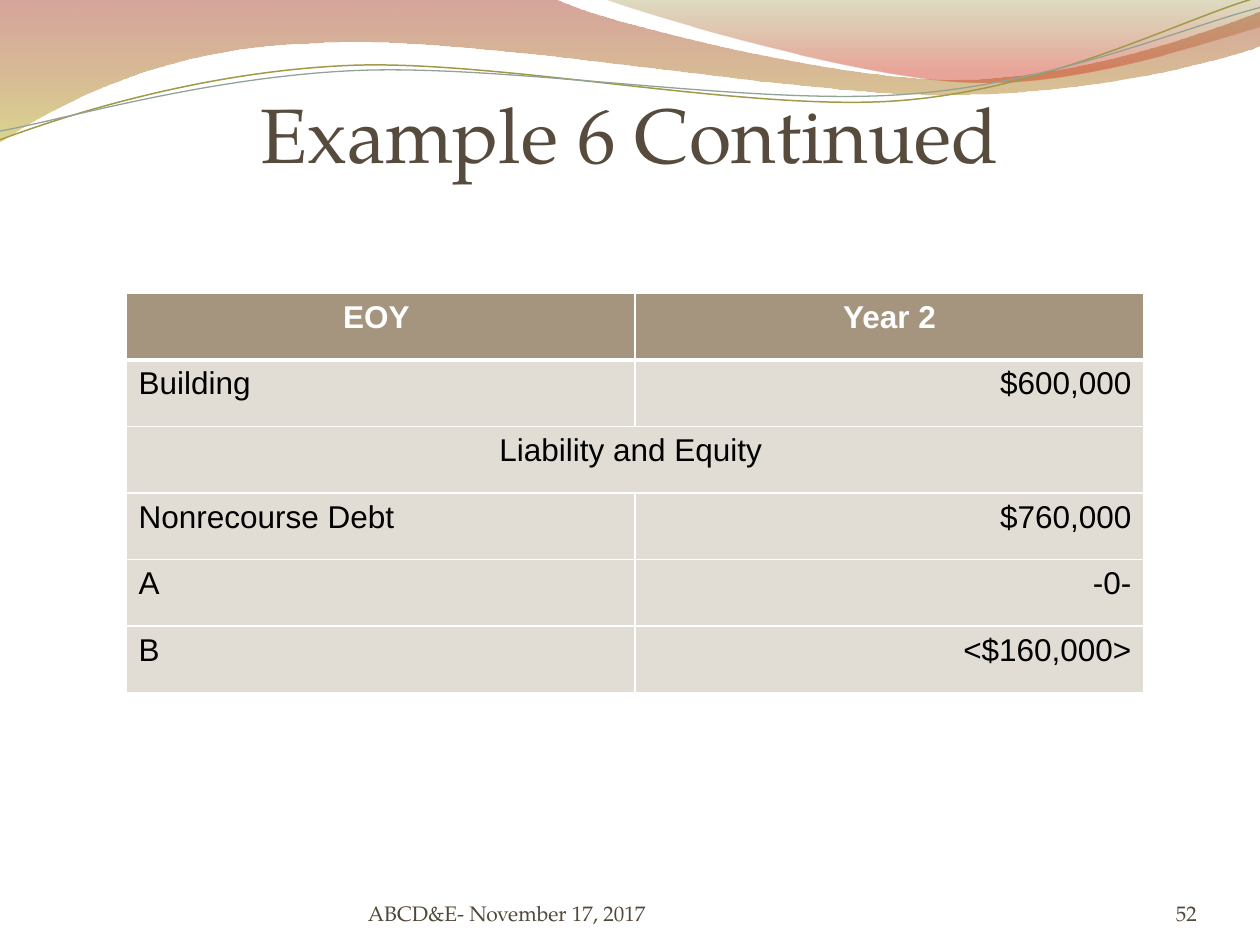
"""Build the 'Example 6 Continued' balance table slide with a wave header."""
from lxml.etree import SubElement
from pptx import Presentation
from pptx.dml.color import RGBColor
from pptx.enum.text import MSO_ANCHOR, MSO_AUTO_SIZE, PP_ALIGN
from pptx.oxml import parse_xml
from pptx.oxml.ns import nsdecls, qn
from pptx.util import Inches, Pt

SERIF, SANS = "TeX Gyre Pagella", "Arial"
TITLE_BROWN = RGBColor(0x56, 0x4B, 0x3C)
FOOTER_BROWN = RGBColor(0x52, 0x48, 0x39)
HEADER_FILL = RGBColor(0xA5, 0x95, 0x7E)
BODY_FILL = RGBColor(0xE1, 0xDC, 0xD4)
WHITE = RGBColor(0xFF, 0xFF, 0xFF)
BLACK = RGBColor(0, 0, 0)
RUST = RGBColor(0xA4, 0x37, 0x24)
MUSTARD = RGBColor(0xBD, 0xB3, 0x33)
OLIVE = RGBColor(0x91, 0x8A, 0x33)
RED = RGBColor(0xD0, 0x38, 0x1E)
OLIVE_LINE = RGBColor(0xA0, 0x9A, 0x49)
SAGE_LINE = RGBColor(0x93, 0xA2, 0x99)

TITLE = "Example 6 Continued"
ROWS = [
    ("EOY ", "Year 2"),
    ("Building", "$600,000"),
    ("Liability and Equity ",),
    ("Nonrecourse Debt", "$760,000"),
    ("A", "-0-"),
    ("B", "<$160,000>"),
]
FOOTERS = [
    ("ABCD&E- November 17, 2017", 2.92, 3.67, PP_ALIGN.LEFT),
    ("52", 8.67, 0.83, PP_ALIGN.RIGHT),
]
BANDS = [
    ([(0, 0), (4.4, -0.01),
      (4.76, 0.17, 6.64, 0.63, 7.58, 0.63), (8.53, 0.63, 9.58, 0.26, 10, 0.09),
      (10.01, 0.36),
      (9.83, 0.44, 8.7, 0.76, 7.46, 0.75), (6.22, 0.75, 3.82, 0.28, 2.57, 0.34),
      (1.29, 0.36, 0.46, 0.83, -0.01, 1.13)],
     [(0, RUST, 45), (1, MUSTARD, 55)]),
    ([(4.79, -0.01), (5.09, 0.11, 6.82, 0.62, 7.69, 0.65),
      (8.56, 0.69, 9.61, 0.32, 10, 0.21), (10, 0)],
     [(0, OLIVE, 30), (0.8, RED, 45)]),
]
STRANDS = [
    ([(0, 1.11), (0.48, 0.93, 1.58, 0.57, 2.77, 0.52),
      (3.95, 0.47, 5.93, 0.89, 7.13, 0.8), (8.33, 0.71, 9.38, 0.15, 9.98, -0.02)],
     OLIVE_LINE, 0.85),
    ([(0, 1.04), (0.47, 0.96, 1.64, 0.61, 2.83, 0.56),
      (4.03, 0.51, 5.97, 0.84, 7.17, 0.75), (8.36, 0.67, 9.41, 0.21, 10, 0.06)],
     SAGE_LINE, 0.75),
]


def add_wave(s, segments, close):
    start, *rest = [[(Inches(x), Inches(y)) for x, y in zip(seg[::2], seg[1::2])]
                    for seg in segments]
    builder = s.shapes.build_freeform(*start[0])
    builder.add_line_segments([pt for seg in rest for pt in seg], close=close)
    sp = builder.convert_to_shape()
    sp.shadow.inherit = False
    steps = iter(list(sp._element.iter(qn("a:lnTo"))))
    for seg in rest:
        first, *others = [next(steps) for _ in seg]
        if others:
            first.tag = qn("a:cubicBezTo")
            for step in others:
                first.append(step[0])
                step.getparent().remove(step)
    return sp


def add_band(s, segments, stops):
    sp = add_wave(s, segments, True)
    sp.line.fill.background()
    sp.fill.gradient()
    sp.fill.gradient_angle = 270
    for stop, (position, color, _) in zip(sp.fill.gradient_stops, stops):
        stop.position = position
        stop.color.rgb = color
    for clr, (_, _, opacity) in zip(sp._element.spPr.iter(qn("a:srgbClr")), stops):
        SubElement(clr, qn("a:alpha")).set("val", str(opacity * 1000))


def add_strand(s, segments, color, width):
    sp = add_wave(s, segments, False)
    sp.fill.background()
    sp.line.color.rgb = color
    sp.line.width = Pt(width)


def style_text(tf, text, size, font, color, align, bold=False):
    p = tf.paragraphs[0]
    p.text = text
    p.alignment = align
    p.font.size, p.font.name, p.font.bold = Pt(size), font, bold
    p.font.color.rgb = color


def set_frame(tf, top=0):
    tf.word_wrap = True
    tf.auto_size = MSO_AUTO_SIZE.NONE
    tf.vertical_anchor = MSO_ANCHOR.BOTTOM
    tf.margin_left = tf.margin_right = tf.margin_bottom = 0
    tf.margin_top = Inches(top)


def set_borders(cell, top, bottom):
    widths = {"lnL": 1, "lnR": 1, "lnT": top, "lnB": bottom}
    for i, (tag, width) in enumerate(widths.items()):
        ln = parse_xml(
            f'<a:{tag} {nsdecls("a")} w="{Pt(width)}"><a:solidFill>'
            f'<a:srgbClr val="{WHITE}"/></a:solidFill></a:{tag}>')
        cell._tc.get_or_add_tcPr().insert(i, ln)


def add_balance_table(s):
    table = s.shapes.add_table(
        len(ROWS), 2, Inches(1), Inches(2.33), Inches(8.08), Inches(3.17)).table
    for r, texts in enumerate(ROWS):
        header = r == 0
        for c in range(2):
            cell = table.cell(r, c)
            cell.fill.solid()
            cell.fill.fore_color.rgb = HEADER_FILL if header else BODY_FILL
            set_borders(cell, 3 if r == 1 else 1, 3 if header else 1)
        if len(texts) == 1:
            table.cell(r, 0).merge(table.cell(r, 1))
        for c, text in enumerate(texts):
            centred = header or len(texts) == 1
            align = PP_ALIGN.CENTER if centred else (PP_ALIGN.LEFT, PP_ALIGN.RIGHT)[c]
            style_text(table.cell(r, c).text_frame, text, 18, SANS,
                       WHITE if header else BLACK, align, header)


def main():
    prs = Presentation()
    prs.slide_width, prs.slide_height = Inches(10), Inches(7.5)
    s = prs.slides.add_slide(prs.slide_layouts[5])
    for band in BANDS:
        add_band(s, *band)
    for strand in STRANDS:
        add_strand(s, *strand)

    title = s.shapes.title
    s.shapes._spTree.append(title._element)
    title.left, title.top = Inches(0.5), Inches(0.77)
    title.width, title.height = Inches(9), Inches(0.65)
    set_frame(title.text_frame, 0.05)
    style_text(title.text_frame, TITLE, 44, SERIF, TITLE_BROWN, PP_ALIGN.CENTER)

    add_balance_table(s)
    for text, left, width, align in FOOTERS:
        tf = s.shapes.add_textbox(
            Inches(left), Inches(6.95), Inches(width), Inches(0.4)).text_frame
        set_frame(tf)
        style_text(tf, text, 12, SERIF, FOOTER_BROWN, align)
    prs.save("out.pptx")


if __name__ == "__main__":
    main()
